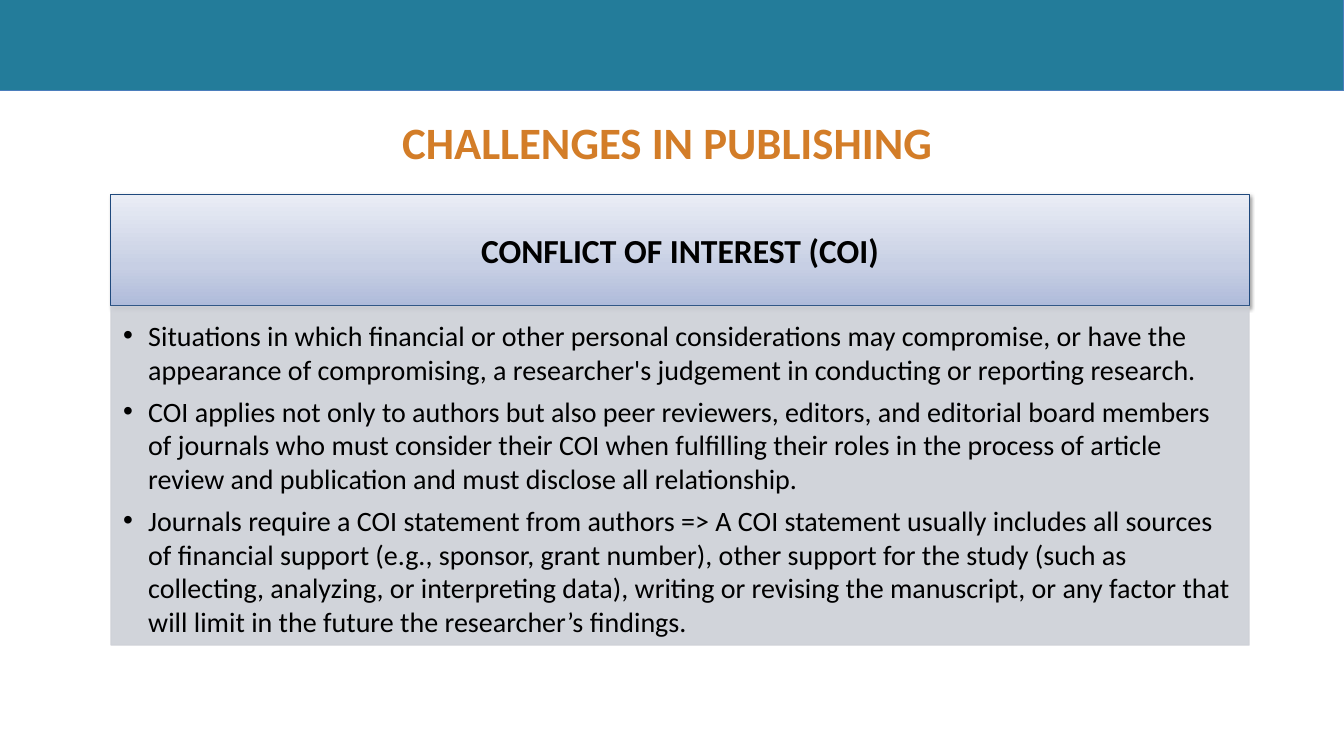
from lxml import etree
from pptx import Presentation
from pptx import util as u
from pptx.dml.color import RGBColor
from pptx.enum import shapes, text
from pptx.oxml import parse_xml
from pptx.oxml.ns import nsdecls, qn

HUES = {
    "teal": "237C9A", "edge": "4B7EBC", "orange": "D37D28", "navy": "1F497D",
    "gray": "CDD0D7", "black": "000000",
    "low": "AFBBDA", "mid": "C7CFE4", "high": "EAEDF5",
}
POINTS = [
    "Situations in which financial or other personal considerations may compromise, or have the "
    "appearance of compromising, a researcher's judgement in conducting or reporting research.",
    "COI applies not only to authors but also peer reviewers, editors, and editorial board members "
    "of journals who must consider their COI when fulfilling their roles in the process of article "
    "review and publication and must disclose all relationship.",
    "Journals require a COI statement from authors => A COI statement usually includes all sources "
    "of financial support (e.g., sponsor, grant number), other support for the study (such as "
    "collecting, analyzing, or interpreting data), writing or revising the manuscript, or any factor "
    "that will limit in the future the researcher’s findings.",
]


class Deck:
    def __init__(self, slide, face="Calibri"):
        self.slide = slide
        self.face = face

    def color(self, name):
        return RGBColor.from_string(HUES[name])

    def rect(self, box, fill, line):
        shape = self.slide.shapes.add_shape(shapes.MSO_SHAPE.RECTANGLE, *map(u.Inches, box))
        shape.shadow.inherit = False
        shape.fill.solid()
        shape.fill.fore_color.rgb = self.color(fill)
        shape.line.color.rgb = self.color(line)
        shape.line.width = u.Pt(0.75)
        return shape

    def label(self, box):
        return self.slide.shapes.add_textbox(*map(u.Inches, box))

    def fade(self, shape, stops):
        marks = "".join(
            f'<a:gs pos="{pos * 1000}"><a:srgbClr val="{HUES[name]}"/></a:gs>' for pos, name in stops)
        grad = parse_xml(f'<a:gradFill {nsdecls("a")} rotWithShape="1"><a:gsLst>{marks}</a:gsLst>'
                         '<a:lin ang="16200000" scaled="0"/></a:gradFill>')
        props = shape._element.spPr
        props.replace(props.find(qn("a:solidFill")), grad)

    def shade(self, shape):
        glow = parse_xml(
            f'<a:outerShdw {nsdecls("a")} blurRad="{u.Pt(3.1)}" dist="{u.Pt(1.6)}" dir="5400000" '
            f'rotWithShape="0"><a:srgbClr val="{HUES["black"]}"><a:alpha val="38000"/></a:srgbClr>'
            '</a:outerShdw>')
        shape._element.spPr.find(qn("a:effectLst")).append(glow)

    def thin(self, shape, share):
        for tone in shape._element.spPr.iter(qn("a:srgbClr")):
            etree.SubElement(tone, qn("a:alpha")).set("val", str(share * 1000))

    def words(self, shape, lines, size, pad, hue="black", bold=False, anchor="TOP", dots=False):
        frame = shape.text_frame
        frame.word_wrap = True
        frame.vertical_anchor = text.MSO_ANCHOR[anchor]
        frame.margin_left, frame.margin_top, frame.margin_right, frame.margin_bottom = map(u.Inches, pad)
        for i, line in enumerate(lines):
            para = frame.add_paragraph() if i else frame.paragraphs[0]
            para.text = line
            para.alignment = text.PP_ALIGN.LEFT if dots else text.PP_ALIGN.CENTER
            if dots:
                para.space_after = u.Pt(6)
                self.dot(para)
            font = para.font
            font.name, font.size, font.bold = self.face, u.Pt(size), bold
            font.color.rgb = self.color(hue)

    def dot(self, para):
        props = para._p.get_or_add_pPr()
        props.set("marL", str(u.Inches(0.25)))
        props.set("indent", str(-u.Inches(0.25)))
        etree.SubElement(props, qn("a:buFont")).set("typeface", "Arial")
        etree.SubElement(props, qn("a:buChar")).set("char", "•")


def main():
    show = Presentation()
    show.slide_width, show.slide_height = u.Inches(13.33), u.Inches(7.5)
    deck = Deck(show.slides.add_slide(show.slide_layouts[6]))

    deck.rect((0, 0, 13.33, 0.9), "teal", "edge")
    title = deck.label((0.62, 1.09, 12, 0.65))
    deck.words(title, ["CHALLENGES IN PUBLISHING"], 32, (0.1, 0.05, 0.1, 0), "orange", True)

    head = deck.rect((1.1, 1.93, 11.29, 1.1), "mid", "navy")
    deck.fade(head, [(0, "low"), (35, "mid"), (100, "high")])
    deck.shade(head)
    deck.words(head, ["CONFLICT OF INTEREST (COI)"], 24, (0.19, 0.11, 0.19, 0.11),
               bold=True, anchor="MIDDLE")

    body = deck.rect((1.1, 3.04, 11.29, 3.36), "gray", "gray")
    deck.thin(body, 90)
    deck.words(body, POINTS, 20, (0.12, 0.12, 0.16, 0.17), dots=True)
    show.save("out.pptx")


if __name__ == "__main__":
    main()
